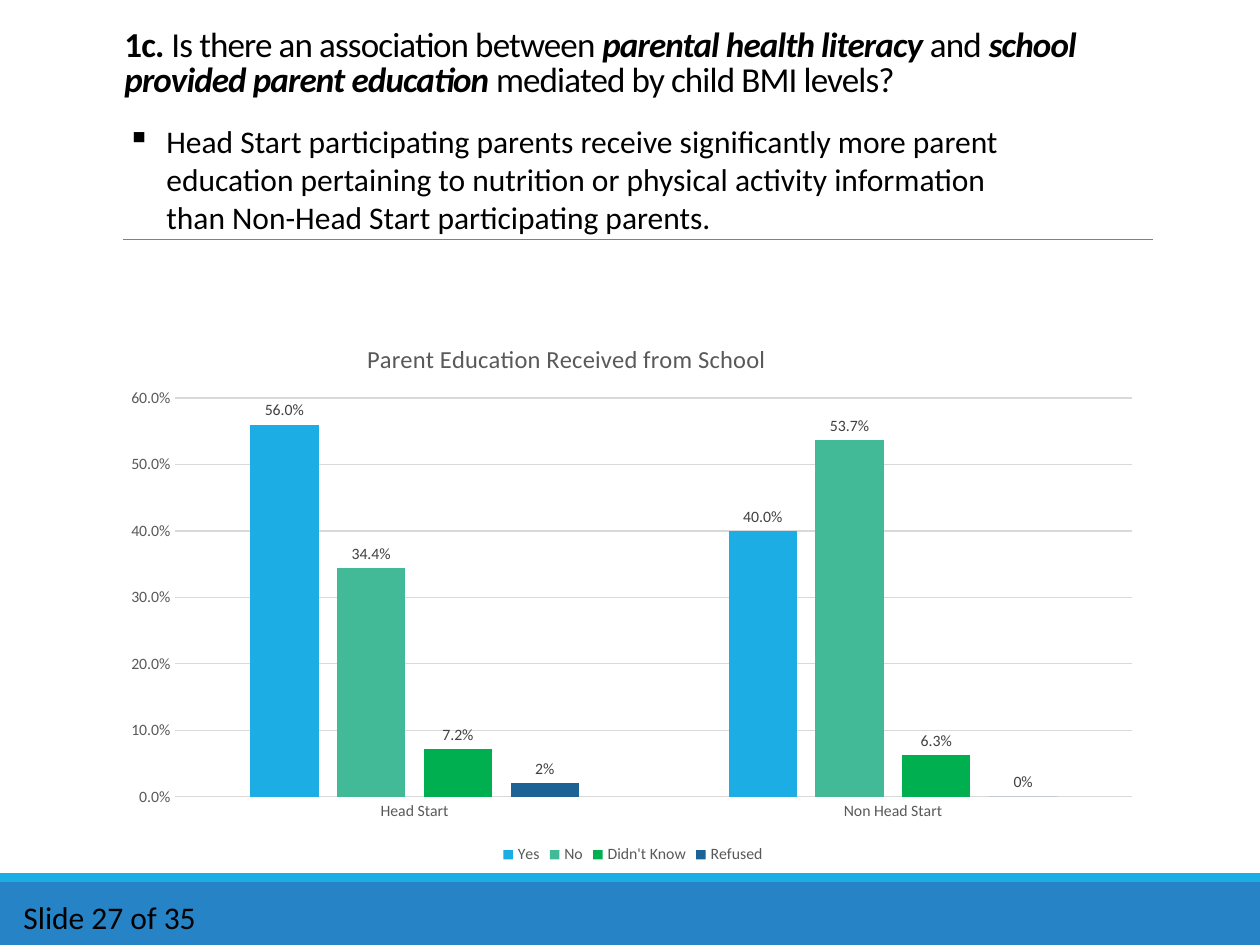
from dataclasses import dataclass

from lxml import etree
from pptx import Presentation
from pptx.chart.data import CategoryChartData
from pptx.dml.color import RGBColor
from pptx.enum.chart import XL_CHART_TYPE, XL_LABEL_POSITION, XL_LEGEND_POSITION, XL_TICK_MARK
from pptx.enum.shapes import MSO_CONNECTOR, MSO_SHAPE
from pptx.enum.text import MSO_ANCHOR
from pptx.oxml.ns import qn
from pptx.util import Pt

COLUMN = XL_CHART_TYPE.COLUMN_CLUSTERED
OUTSIDE = XL_LABEL_POSITION.OUTSIDE_END
BELOW = XL_LEGEND_POSITION.BOTTOM
NO_TICK = XL_TICK_MARK.NONE
STRAIGHT = MSO_CONNECTOR.STRAIGHT
RECT = MSO_SHAPE.RECTANGLE
TOP, BOTTOM = MSO_ANCHOR.TOP, MSO_ANCHOR.BOTTOM
SCALE = 914400 / 126  # EMU in one px


@dataclass(frozen=True)
class Theme:
    font: str = "Calibri"
    ink: str = "000000"
    band: str = "2683C6"
    strip: str = "1CADE4"
    rule: str = "808080"
    grid: str = "D9D9D9"
    axis: str = "595959"
    label: str = "404040"
    head: int = 20
    body: int = 18
    title: int = 14
    small: int = 9


THEME = Theme()

# Question runs: text, emphasis (b bold, i italic)
QUESTION = [
    ("1c.", "b"),
    (" Is there an association between ", ""),
    ("parental health literacy ", "bi"),
    ("and ", ""),
    ("school provided parent education ", "bi"),
    ("mediated by child BMI levels?", ""),
]
FINDING = (
    "Head Start participating parents receive significantly more parent "
    "education pertaining to nutrition or physical activity information "
    "than Non-Head Start participating parents."
)
GROUPS = ["Head Start", "Non Head Start"]
# Series: name, values, colour, label format
SERIES = [
    ("Yes", (0.56, 0.4), "1CADE4", "0.0%"),
    ("No", (0.344, 0.537), "42BA97", "0.0%"),
    ("Didn't Know", (0.072, 0.063), "00B050", "0.0%"),
    ("Refused", (0.02, 0), "1D6294", "0%"),
]


def px(*nums):
    return [round(n * SCALE) for n in nums]


def paint(fill, color):
    fill.solid()
    fill.fore_color.rgb = RGBColor.from_string(color)


def style(font, size, color, bold=False):
    font.name = THEME.font
    font.size = Pt(size)
    font.bold = bold
    font.color.rgb = RGBColor.from_string(color)


def stroke(line, color, width):
    line.color.rgb = RGBColor.from_string(color)
    line.width = Pt(width)


def add_bar(slide, box, color):
    bar = slide.shapes.add_shape(RECT, *px(*box))
    bar.shadow.inherit = False
    paint(bar.fill, color)
    bar.line.fill.background()


def add_rule(slide, ends):
    rule = slide.shapes.add_connector(STRAIGHT, *px(*ends))
    stroke(rule.line, THEME.rule, 0.5)
    etree.SubElement(rule.element.spPr, qn("a:effectLst"))


def add_text(slide, box, runs, size, anchor=TOP):
    frame = slide.shapes.add_textbox(*px(*box)).text_frame
    frame.word_wrap = True
    frame.vertical_anchor = anchor
    para = frame.paragraphs[0]
    for text, marks in runs:
        run = para.add_run()
        run.text = text
        style(run.font, size, THEME.ink, "b" in marks)
        run.font.italic = "i" in marks
    return frame


def add_bullet(para, sign, indent):
    props = para._p.get_or_add_pPr()
    gap = px(indent)[0]
    props.set("marL", str(gap))
    props.set("indent", str(-gap))
    etree.SubElement(props, qn("a:buChar")).set("char", sign)


def set_layout(part, index, **parts):
    """Place a chart part by fractions of the chart's size."""
    for old in part.findall(qn("c:layout")):
        part.remove(old)
    layout = etree.Element(qn("c:layout"))
    part.insert(index, layout)
    manual = etree.SubElement(layout, qn("c:manualLayout"))
    if "w" in parts:
        etree.SubElement(manual, qn("c:layoutTarget")).set("val", "inner")
    for key in ("xMode", "yMode"):
        etree.SubElement(manual, qn("c:" + key)).set("val", "edge")
    for key, num in parts.items():
        etree.SubElement(manual, qn("c:" + key)).set("val", str(num))


def add_title(chart, text):
    frame = chart.chart_title.text_frame
    run = frame.paragraphs[0].add_run()
    run.text = text
    style(run.font, THEME.title, THEME.axis)
    chart.chart_title.include_in_layout = False
    set_layout(chart.element.find(".//" + qn("c:title")), 1, x=0.24, y=0.04)


def style_axes(chart):
    cat, val = chart.category_axis, chart.value_axis
    for axis in (cat, val):
        axis.major_tick_mark = axis.minor_tick_mark = NO_TICK
        style(axis.tick_labels.font, THEME.small, THEME.axis)
    stroke(cat.format.line, THEME.grid, 0.75)
    val.format.line.fill.background()
    val.has_major_gridlines = True
    stroke(val.major_gridlines.format.line, THEME.grid, 0.75)
    val.minimum_scale, val.maximum_scale, val.major_unit = 0, 0.6, 0.1
    val.tick_labels.number_format = "0.0%"
    val.tick_labels.number_format_is_linked = False


def style_bars(plot):
    plot.vary_by_categories = False
    plot.gap_width, plot.overlap = 219, -27
    for bars, (_, _, color, form) in zip(plot.series, SERIES):
        paint(bars.format.fill, color)
        bars.invert_if_negative = False
        labels = bars.data_labels
        labels.show_value = True
        labels.position = OUTSIDE
        labels.number_format = form
        labels.number_format_is_linked = False
        style(labels.font, THEME.small, THEME.label)


def add_chart(slide, box):
    data = CategoryChartData()
    data.categories = GROUPS
    for name, nums, _, form in SERIES:
        data.add_series(name, nums, form)
    chart = slide.shapes.add_chart(COLUMN, *px(*box), data).chart
    style(chart.font, 10, THEME.ink)
    add_title(chart, "Parent Education Received from School")
    style_axes(chart)
    style_bars(chart.plots[0])
    chart.has_legend = True
    chart.legend.position = BELOW
    chart.legend.include_in_layout = False
    style(chart.legend.font, THEME.small, THEME.axis)
    area = chart.element.find(".//" + qn("c:plotArea"))
    set_layout(area, 0, x=0.06, y=0.15, w=0.92, h=0.72)


def main():
    deck = Presentation()
    deck.slide_width, deck.slide_height = px(1260, 945)
    slide = deck.slides.add_slide(deck.slide_layouts[6])

    # Footer bands and the rule under the finding
    add_bar(slide, (0, 882, 1260, 63), THEME.band)
    add_bar(slide, (0, 873, 1260, 9), THEME.strip)
    add_rule(slide, (123, 239, 1153, 239))

    # Question
    head = add_text(slide, (112, 0, 1040, 147), QUESTION, THEME.head, BOTTOM)
    head.margin_bottom = px(47)[0]
    head.paragraphs[0].line_spacing = 0.85
    for run in head.paragraphs[0].runs:
        run.font._element.set("spc", "-50")

    # Chart, finding and slide count
    add_chart(slide, (113, 315, 1040, 554))
    body = add_text(slide, (115, 116, 927, 127), [(FINDING, "")], THEME.body)
    add_bullet(body.paragraphs[0], "▪", 39)
    add_text(slide, (11, 892, 238, 50), [("Slide 27 of 35", "")], THEME.body)

    deck.save("out.pptx")


if __name__ == "__main__":
    main()
